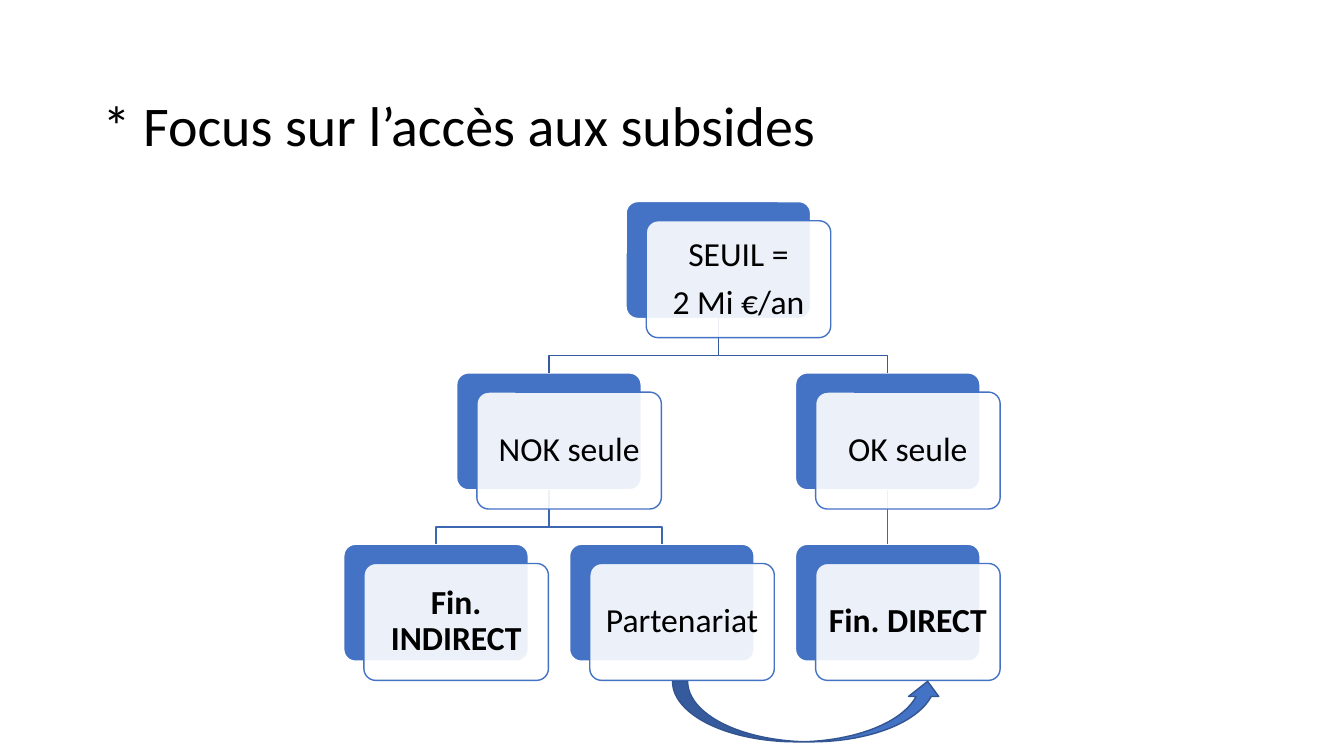
from dataclasses import dataclass

from lxml import etree
from pptx import Presentation
from pptx.dml.color import RGBColor
from pptx.enum.shapes import MSO_CONNECTOR, MSO_SHAPE
from pptx.enum.text import MSO_ANCHOR, PP_ALIGN
from pptx.oxml.ns import qn
from pptx.util import Inches, Pt

ROUNDED = MSO_SHAPE.ROUNDED_RECTANGLE
CURVED_ARROW = MSO_SHAPE.CURVED_UP_ARROW
STRAIGHT = MSO_CONNECTOR.STRAIGHT
MIDDLE = MSO_ANCHOR.MIDDLE
CENTER = PP_ALIGN.CENTER

COLORS = {
    "blue": "4472C4",
    "root_link": "365B9D",
    "leaf_link": "3E67B2",
    "arrow_edge": "325491",
    "white": "FFFFFF",
    "black": "000000",
}
FONT = "Calibri"
TREE_LEFT, TREE_TOP = 3.41, 2.0
COLUMN_STEP, LEVEL_STEP = 2.24, 1.7
CARD_WIDTH, CARD_HEIGHT = 1.83, 1.16
FRONT_SHIFT_X, FRONT_SHIFT_Y = 0.2, 0.19
ELBOW_DROP = 0.37


@dataclass(frozen=True)
class Node:
    lines: tuple[str, ...]
    column: float
    level: int
    bold: bool = False

    @property
    def left(self) -> float:
        return TREE_LEFT + self.column * COLUMN_STEP

    @property
    def top(self) -> float:
        return TREE_TOP + self.level * LEVEL_STEP

    @property
    def center(self) -> float:
        return self.left + CARD_WIDTH / 2

    @property
    def bottom(self) -> float:
        return self.top + CARD_HEIGHT


THRESHOLD = Node(("SEUIL =", "2 Mi €/an"), 1.25, 0)
NOT_ALONE = Node(("NOK seule",), 0.5, 1)
ALONE = Node(("OK seule",), 2, 1)
INDIRECT = Node(("Fin. INDIRECT",), 0, 2, bold=True)
PARTNERSHIP = Node(("Partenariat",), 1, 2)
DIRECT = Node(("Fin. DIRECT",), 2, 2, bold=True)
NODES = (THRESHOLD, NOT_ALONE, ALONE, INDIRECT, PARTNERSHIP, DIRECT)
LINKS = (
    (THRESHOLD, NOT_ALONE),
    (THRESHOLD, ALONE),
    (NOT_ALONE, INDIRECT),
    (NOT_ALONE, PARTNERSHIP),
    (ALONE, DIRECT),
)


def rgb(name: str) -> RGBColor:
    return RGBColor.from_string(COLORS[name])


def set_line(shape, color: str) -> None:
    shape.line.color.rgb = rgb(color)
    shape.line.width = Pt(1)


def set_font(paragraph, size: float, bold: bool = False) -> None:
    font = paragraph.font
    font.name, font.size, font.bold = FONT, Pt(size), bold
    font.color.rgb = rgb("black")
    paragraph.line_spacing = 0.9


def add_filled(slide, kind, left: float, top: float, width: float, height: float,
               fill: str, line: str):
    shape = slide.shapes.add_shape(
        kind, Inches(left), Inches(top), Inches(width), Inches(height))
    shape.shadow.inherit = False
    shape.fill.solid()
    shape.fill.fore_color.rgb = rgb(fill)
    set_line(shape, line)
    return shape


def add_card(slide, left: float, top: float, fill: str, line: str):
    card = add_filled(slide, ROUNDED, left, top, CARD_WIDTH, CARD_HEIGHT, fill, line)
    card.adjustments[0] = 0.1
    return card


def add_front_card(slide, node: Node) -> None:
    """Add the translucent card that carries the node's text."""
    card = add_card(slide, node.left + FRONT_SHIFT_X, node.top + FRONT_SHIFT_Y,
                    "white", "blue")
    fill_color = card.fill._xPr.find(qn("a:solidFill"))[0]
    etree.SubElement(fill_color, qn("a:alpha"), val="90000")
    frame = card.text_frame
    frame.word_wrap = True
    frame.vertical_anchor = MIDDLE
    frame.margin_left = frame.margin_right = Inches(0.09)
    frame.margin_top = frame.margin_bottom = Inches(0.1)
    for index, line in enumerate(node.lines):
        paragraph = frame.add_paragraph() if index else frame.paragraphs[0]
        paragraph.text = line
        paragraph.alignment = CENTER
        paragraph.space_after = Pt(8.4)
        set_font(paragraph, 24, node.bold)


def add_link(slide, parent: Node, child: Node, back_cards: dict) -> None:
    color = "leaf_link" if parent.level else "root_link"
    if parent.column == child.column:
        link = slide.shapes.add_connector(STRAIGHT, 0, 0, 0, 0)
        link.begin_connect(back_cards[parent], 2)
        link.end_connect(back_cards[child], 0)
        etree.SubElement(link._element.spPr, qn("a:effectLst"))
        set_line(link, color)
        return
    bend = parent.bottom + ELBOW_DROP
    route = [(parent.center, parent.bottom), (parent.center, bend),
             (child.center, bend), (child.center, child.top)]
    start, *rest = [(Inches(x), Inches(y)) for x, y in route]
    builder = slide.shapes.build_freeform(*start)
    builder.add_line_segments(rest, close=False)
    elbow = builder.convert_to_shape()
    elbow.shadow.inherit = False
    elbow.fill.background()
    set_line(elbow, color)


def add_title(slide, text: str) -> None:
    title = slide.shapes.add_textbox(
        Inches(0.92), Inches(0.55), Inches(11.5), Inches(1.45))
    frame = title.text_frame
    frame.word_wrap = True
    frame.vertical_anchor = MIDDLE
    frame.text = text
    set_font(frame.paragraphs[0], 40)


def main() -> None:
    deck = Presentation()
    deck.slide_width, deck.slide_height = Inches(13.33), Inches(7.5)
    slide = deck.slides.add_slide(deck.slide_layouts[6])
    add_title(slide, "* Focus sur l’accès aux subsides")
    back_cards = {node: add_card(slide, node.left, node.top, "blue", "white")
                  for node in NODES}
    for parent, child in LINKS:
        add_link(slide, parent, child, back_cards)
    for node in NODES:
        add_front_card(slide, node)
    add_filled(slide, CURVED_ARROW, 6.67, 6.76, 2.68, 0.6, "blue", "arrow_edge")
    deck.save("out.pptx")


if __name__ == "__main__":
    main()
